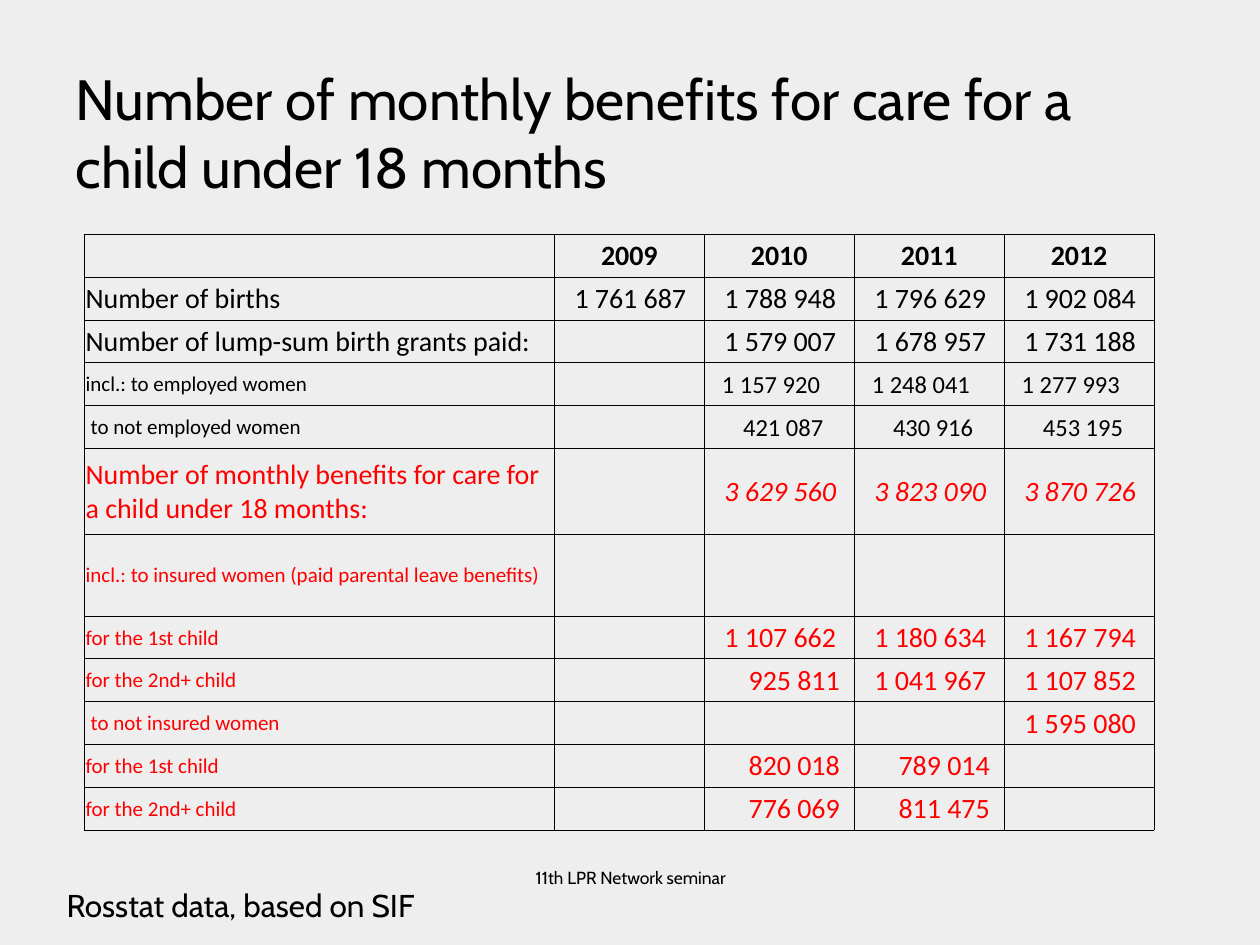
from lxml import etree
from pptx import Presentation
from pptx.dml.color import RGBColor
from pptx.enum.text import MSO_ANCHOR, PP_ALIGN
from pptx.oxml.ns import qn
from pptx.util import Inches, Pt

MIDDLE, BOTTOM = MSO_ANCHOR.MIDDLE, MSO_ANCHOR.BOTTOM
LEFT, CENTER = PP_ALIGN.LEFT, PP_ALIGN.CENTER
BLACK = RGBColor(0x00, 0x00, 0x00)
RED = RGBColor(0xFF, 0x00, 0x00)
PALE_GREY = RGBColor(0xEE, 0xEE, 0xEE)


def style_paragraph(paragraph, font_name, size, color=BLACK, alignment=LEFT):
    paragraph.alignment = alignment
    paragraph.font.name = font_name
    paragraph.font.size = Pt(size)
    paragraph.font.color.rgb = color


def add_cell_borders(cell):
    """Draw a thin black line on all four sides; call before setting the fill."""
    properties = cell._tc.get_or_add_tcPr()
    for side in ("a:lnL", "a:lnR", "a:lnT", "a:lnB"):
        line = etree.SubElement(properties, qn(side), w=str(Pt(0.5)))
        fill = etree.SubElement(line, qn("a:solidFill"))
        etree.SubElement(fill, qn("a:srgbClr"), val=str(BLACK))


presentation = Presentation()
presentation.slide_width = Inches(10)
presentation.slide_height = Inches(7.5)
slide = presentation.slides.add_slide(presentation.slide_layouts[5])
slide.background.fill.solid()
slide.background.fill.fore_color.rgb = PALE_GREY

# Title
title = slide.shapes.title
title.left, title.top = Inches(0.5), Inches(0.39)
title.width, title.height = Inches(9), Inches(1.25)
title.text_frame.text = "Number of monthly benefits for care for a child under 18 months"
title.text_frame.vertical_anchor = BOTTOM
style_paragraph(title.text_frame.paragraphs[0], "Cabin", 32.4)

# Benefits table: label, label size, number size, colour, row height, numbers by year
YEARS = ["2009", "2010", "2011", "2012"]
ROWS = [
    ("", 16, 16, BLACK, 0.34, YEARS),
    ("Number of births", 16, 16, BLACK, 0.34,
     ["1 761 687", "1 788 948", "1 796 629", "1 902 084"]),
    ("Number of lump-sum birth grants paid:", 16, 16, BLACK, 0.34,
     ["", "1 579 007", "1 678 957", "1 731 188"]),
    ("incl.: to employed women", 12, 14, BLACK, 0.34,
     ["", "1 157 920", "1 248 041", "1 277 993"]),
    ("to not employed women", 12, 14, BLACK, 0.34,
     ["", "421 087", "430 916", "453 195"]),
    ("Number of monthly benefits for care for a child under 18 months:", 16, 16, RED, 0.68,
     ["", "3 629 560", "3 823 090", "3 870 726"]),
    ("incl.: to insured women (paid parental leave benefits)", 12, 16, RED, 0.65,
     ["", "", "", ""]),
    ("for the 1st child", 12, 16, RED, 0.34,
     ["", "1 107 662", "1 180 634", "1 167 794"]),
    ("for the 2nd+ child", 12, 16, RED, 0.34,
     ["", "925 811", "1 041 967", "1 107 852"]),
    ("to not insured women", 12, 16, RED, 0.34, ["", "", "", "1 595 080"]),
    ("for the 1st child", 12, 16, RED, 0.34, ["", "820 018", "789 014", ""]),
    ("for the 2nd+ child", 12, 16, RED, 0.34, ["", "776 069", "811 475", ""]),
]
TOTAL_ROW = 5
COLUMN_WIDTHS = [3.73] + [1.19] * len(YEARS)
MARGIN = 0.01
# Left indents of the numbers, as a share of the text size
MILLIONS_INDENT, THOUSANDS_INDENT = 0.01, 0.022

table = slide.shapes.add_table(
    len(ROWS), len(COLUMN_WIDTHS), Inches(0.67), Inches(1.86), Inches(8.5), Inches(4.72)
).table
table.first_row = False
table.horz_banding = False
for column, width in zip(table.columns, COLUMN_WIDTHS):
    column.width = Inches(width)

for row_index, (label, label_size, number_size, color, height, numbers) in enumerate(ROWS):
    table.rows[row_index].height = Inches(height)
    for column_index, text in enumerate([label] + numbers):
        is_label = column_index == 0
        is_header = row_index == 0
        if is_label:
            indent = 0.05 if text.startswith("to not") else MARGIN
        elif is_header:
            indent = MARGIN
        elif len(text) > len("000 000"):
            indent = number_size * MILLIONS_INDENT
        else:
            indent = number_size * THOUSANDS_INDENT

        cell = table.cell(row_index, column_index)
        add_cell_borders(cell)
        cell.fill.background()
        cell.margin_left = Inches(indent)
        cell.margin_right = cell.margin_top = Inches(MARGIN)
        cell.margin_bottom = 0
        cell.vertical_anchor = MIDDLE
        cell.text = text
        paragraph = cell.text_frame.paragraphs[0]
        style_paragraph(paragraph, "Calibri", label_size if is_label else number_size,
                        color, CENTER if is_header else LEFT)
        paragraph.font.bold = is_header
        paragraph.font.italic = row_index == TOTAL_ROW and not is_label

# Source note and footer
for text, left, top, width, height, size, alignment in [
    ("Rosstat data, based on SIF", 0.43, 6.98, 3.7, 0.4, 18, LEFT),
    ("11th LPR Network seminar", 3.42, 6.83, 3.17, 0.52, 10, CENTER),
]:
    text_box = slide.shapes.add_textbox(Inches(left), Inches(top), Inches(width), Inches(height))
    text_box.text_frame.word_wrap = True
    text_box.text_frame.text = text
    style_paragraph(text_box.text_frame.paragraphs[0], "Cabin", size, alignment=alignment)

presentation.save("out.pptx")
